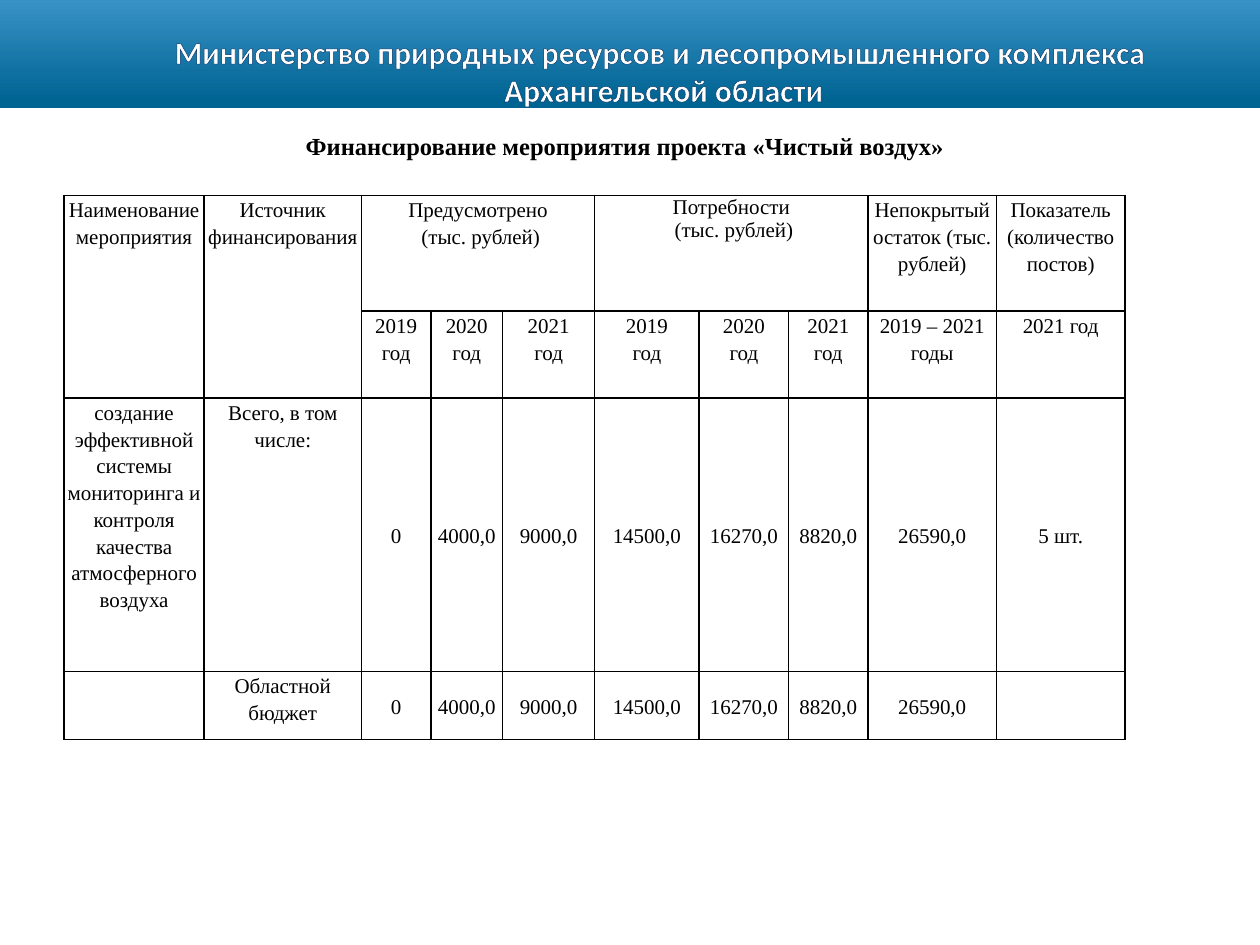
from dataclasses import dataclass

from lxml import etree
from pptx import Presentation
from pptx.dml.color import RGBColor
from pptx.enum.shapes import MSO_SHAPE
from pptx.enum.text import MSO_ANCHOR, MSO_AUTO_SIZE, PP_ALIGN
from pptx.oxml.ns import qn
from pptx.util import Inches, Pt

RECTANGLE = MSO_SHAPE.RECTANGLE
TOP, MIDDLE = MSO_ANCHOR.TOP, MSO_ANCHOR.MIDDLE
CENTER = PP_ALIGN.CENTER
NO_AUTOFIT = MSO_AUTO_SIZE.NONE

COLORS = {
    "band_dark": "006493",
    "band_light": "3992C5",
    "ministry": "FFFFFF",
    "ministry_outline": "003366",
    "text": "000000",
    "border": "000000",
}
SERIF = "Times New Roman"
TITLE_ONLY = 5

COLUMN_WIDTHS = [1.11, 1.25, 0.55, 0.57, 0.73, 0.83, 0.71, 0.63, 1.02, 1.02]
ROW_HEIGHTS = [0.92, 0.69, 2.17, 0.54]
COLUMN_INSETS = [0.01, 0.01, 0.01, 0.01, 0.05, 0.07, 0.07, 0.07, 0.05, 0.05]
HEADER_INSET = 0.01
FIRST_VALUE_ROW, FIRST_VALUE_COLUMN = 2, 2


@dataclass
class HeaderCell:
    row: int
    column: int
    text: str
    rows: int = 1
    columns: int = 1
    line_spacing: float = 1.15


HEADERS = [
    HeaderCell(0, 0, "Наименование мероприятия", rows=2),
    HeaderCell(0, 1, "Источник финансирования", rows=2),
    HeaderCell(0, 2, "Предусмотрено\n (тыс. рублей)", columns=3),
    HeaderCell(0, 5, "Потребности\n (тыс. рублей)", columns=3, line_spacing=1.0),
    HeaderCell(0, 8, "Непокрытый остаток (тыс. рублей)"),
    HeaderCell(0, 9, "Показатель (количество постов)"),
    *(HeaderCell(1, 2 + i, f"{2019 + i % 3}\nгод") for i in range(6)),
    HeaderCell(1, 8, "2019 – 2021 годы"),
    HeaderCell(1, 9, "2021 год"),
]
AMOUNTS = ["0", "4000,0", "9000,0", "14500,0", "16270,0", "8820,0", "26590,0"]
BODY = [
    ["создание эффективной системы мониторинга и контроля качества "
     "атмосферного воздуха", "Всего, в том числе:", *AMOUNTS, "5 шт."],
    ["", "Областной бюджет", *AMOUNTS, ""],
]


def rgb(name: str) -> RGBColor:
    return RGBColor.from_string(COLORS[name])


def write(frame, text: str, *, size: float, font: str = SERIF, color: str = "text",
          bold: bool = False, line_spacing: float = 1.0, outline: str = "") -> None:
    """Fill a text frame with centred paragraphs, one for each line of text."""
    for index, line in enumerate(text.split("\n")):
        paragraph = frame.paragraphs[0] if index == 0 else frame.add_paragraph()
        paragraph.alignment = CENTER
        paragraph.line_spacing = line_spacing
        if not line:
            paragraph.font.size = Pt(size)
            continue
        run = paragraph.add_run()
        run.text = line
        run.font.name, run.font.size, run.font.bold = font, Pt(size), bold
        run.font.color.rgb = rgb(color)
        if outline:
            edge = etree.Element(qn("a:ln"), w=str(Pt(0.25)))
            fill = etree.SubElement(edge, qn("a:solidFill"))
            etree.SubElement(fill, qn("a:srgbClr"), val=COLORS[outline])
            run.font._element.insert(0, edge)


def set_borders(cell) -> None:
    properties = cell._tc.get_or_add_tcPr()
    for position, side in enumerate(("lnL", "lnR", "lnT", "lnB")):
        edge = etree.Element(qn(f"a:{side}"), w=str(Pt(1)))
        fill = etree.SubElement(edge, qn("a:solidFill"))
        etree.SubElement(fill, qn("a:srgbClr"), val=COLORS["border"])
        properties.insert(position, edge)


def add_header_band(slide) -> None:
    band = slide.shapes.add_shape(RECTANGLE, 0, 0, Inches(10), Inches(0.86))
    band.shadow.inherit = False
    band.line.fill.background()
    band.fill.gradient()
    band.fill.gradient_angle = 90
    stops = ((0.07, "band_dark"), (1.0, "band_light"))
    for stop, (position, color) in zip(band.fill.gradient_stops, stops):
        stop.position = position
        stop.color.rgb = rgb(color)

    ministry = slide.shapes.add_textbox(Inches(0.83), Inches(0.21), Inches(8.82), Inches(0.55))
    ministry.text_frame.word_wrap = False
    write(ministry.text_frame,
          "Министерство природных ресурсов и лесопромышленного комплекса\n"
          " Архангельской области",
          size=18, font="Calibri", color="ministry", bold=True, outline="ministry_outline")


def add_title(slide) -> None:
    title = slide.shapes.title
    title.left, title.top = Inches(0.51), Inches(0.99)
    title.width, title.height = Inches(8.9), Inches(0.34)
    frame = title.text_frame
    frame.auto_size = NO_AUTOFIT
    frame.vertical_anchor = TOP
    write(frame, "Финансирование мероприятия проекта «Чистый воздух»", size=14, bold=True)


def add_funding_table(slide) -> None:
    funding = slide.shapes.add_table(
        len(ROW_HEIGHTS), len(COLUMN_WIDTHS), Inches(0.51), Inches(1.55),
        Inches(sum(COLUMN_WIDTHS)), Inches(sum(ROW_HEIGHTS))).table
    funding.first_row = funding.horz_banding = False
    for column, width in zip(funding.columns, COLUMN_WIDTHS):
        column.width = Inches(width)
    for row, height in zip(funding.rows, ROW_HEIGHTS):
        row.height = Inches(height)

    # Plain bordered grid
    for row in range(len(ROW_HEIGHTS)):
        for column, column_inset in enumerate(COLUMN_INSETS):
            cell = funding.cell(row, column)
            inset = HEADER_INSET if row == 0 else column_inset
            cell.margin_left = cell.margin_right = Inches(inset)
            cell.margin_top = cell.margin_bottom = 0
            cell.fill.background()
            set_borders(cell)

    # Column headings
    for header in HEADERS:
        cell = funding.cell(header.row, header.column)
        if header.rows > 1 or header.columns > 1:
            cell.merge(funding.cell(header.row + header.rows - 1,
                                    header.column + header.columns - 1))
        write(cell.text_frame, header.text, size=12, line_spacing=header.line_spacing)

    # Funding sources and amounts
    for row, values in enumerate(BODY, FIRST_VALUE_ROW):
        for column, value in enumerate(values):
            cell = funding.cell(row, column)
            cell.vertical_anchor = MIDDLE if column >= FIRST_VALUE_COLUMN else TOP
            write(cell.text_frame, value, size=12, line_spacing=1.15)


def main() -> None:
    deck = Presentation()
    deck.slide_width, deck.slide_height = Inches(10), Inches(7.5)
    slide = deck.slides.add_slide(deck.slide_layouts[TITLE_ONLY])
    add_header_band(slide)
    add_funding_table(slide)
    add_title(slide)
    deck.save("out.pptx")


if __name__ == "__main__":
    main()
